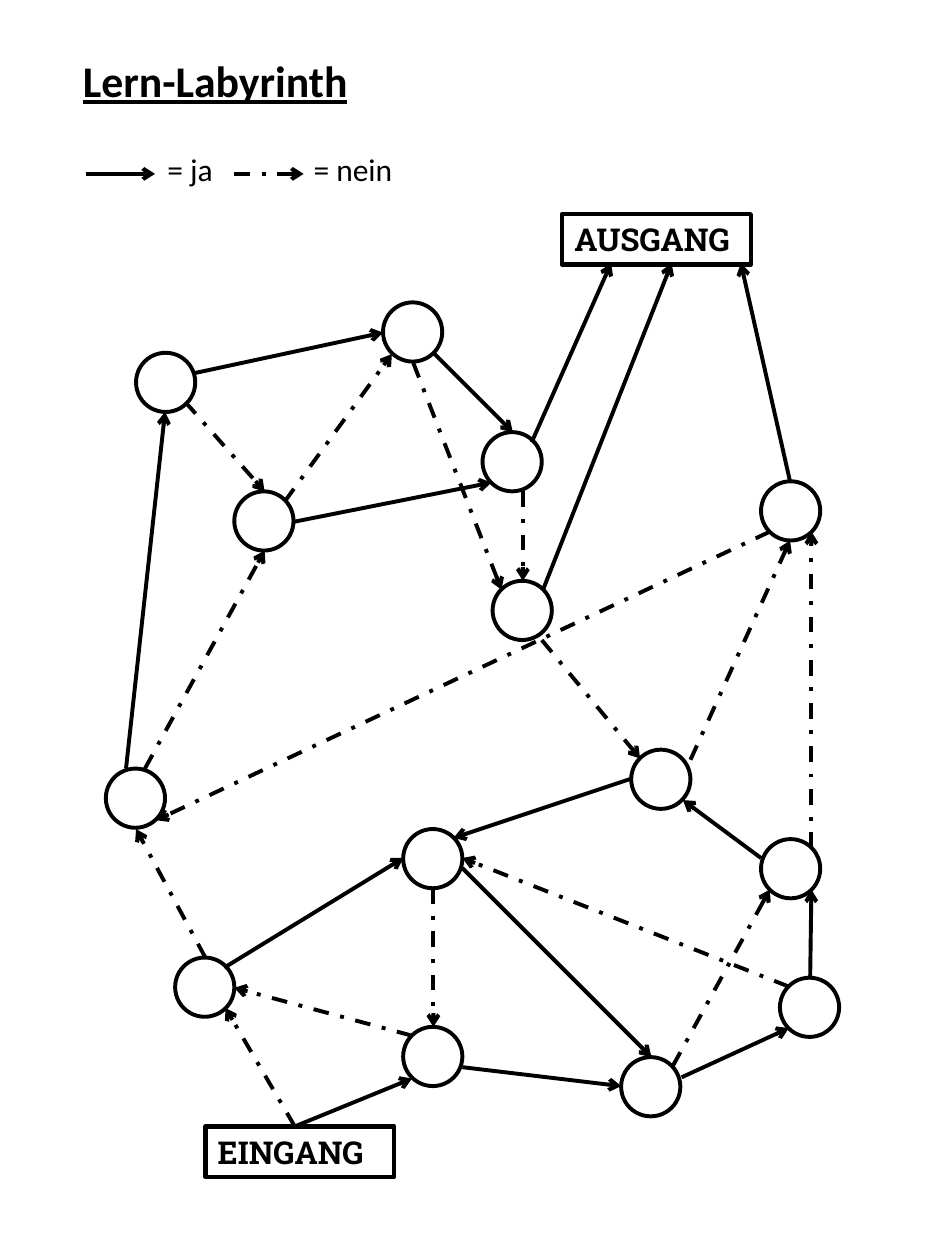
from dataclasses import dataclass
from typing import NamedTuple

from lxml.etree import SubElement
from pptx import Presentation
from pptx.dml.color import RGBColor as Rgb
from pptx.enum.dml import MSO_LINE_DASH_STYLE as Dash
from pptx.enum.shapes import MSO_CONNECTOR as Link, MSO_SHAPE as Kind
from pptx.enum.text import MSO_ANCHOR as Anchor, MSO_AUTO_SIZE as Fit, PP_ALIGN as Align
from pptx.oxml.ns import qn
from pptx.shapes.shapetree import SlideShapes as Shapes
from pptx.util import Emu, Pt

SCALE = 9144  # EMU in one px, 100 px to the inch


def px(n: int) -> Emu:
    return Emu(n * SCALE)


@dataclass(frozen=True)
class Theme:
    ink: Rgb = Rgb(0, 0, 0)
    body: str = "Calibri"
    slab: str = "Roboto Slab"
    title: float = 25
    text: float = 18
    line: float = 2.25
    frame: float = 2.5


THEME = Theme()
NODE = 47  # circle diameter


class Node(NamedTuple):
    x: int
    y: int


class Arrow(NamedTuple):
    x1: int
    y1: int
    x2: int
    y2: int


class Label(NamedTuple):
    text: str
    x: int
    y: int
    w: int
    h: int
    font: str = THEME.body
    size: float = THEME.text
    bold: bool = False
    under: bool = False


# Circles of the maze
NODES = [
    Node(383, 343), Node(604, 382), Node(108, 280), Node(186, 390),
    Node(391, 461), Node(84, 610), Node(304, 240), Node(320, 658),
    Node(501, 595), Node(604, 666), Node(619, 776), Node(493, 839),
    Node(320, 815), Node(139, 760),
]

# Solid arrows: ja
YES = [
    Arrow(68, 138, 123, 138),  # legend
    Arrow(541, 855, 626, 816), Arrow(422, 351, 485, 209),
    Arrow(431, 468, 533, 209), Arrow(627, 382, 588, 209),
    Arrow(234, 414, 390, 383), Arrow(344, 280, 407, 343),
    Arrow(155, 296, 304, 264), Arrow(100, 610, 131, 327),
    Arrow(234, 894, 327, 856), Arrow(367, 847, 493, 862),
    Arrow(367, 689, 517, 839), Arrow(178, 768, 320, 681),
    Arrow(501, 618, 360, 665), Arrow(643, 776, 644, 706),
    Arrow(604, 681, 542, 635),
]

# Dash-dot arrows: nein
NO = [
    Arrow(186, 138, 241, 138),  # legend
    Arrow(226, 398, 311, 281), Arrow(147, 319, 210, 390),
    Arrow(115, 610, 210, 437), Arrow(611, 422, 124, 651),
    Arrow(328, 288, 398, 468), Arrow(415, 390, 415, 461),
    Arrow(163, 760, 108, 658), Arrow(234, 894, 179, 800),
    Arrow(548, 603, 627, 429), Arrow(430, 508, 508, 602),
    Arrow(327, 822, 186, 784), Arrow(534, 846, 611, 706),
    Arrow(344, 705, 344, 815), Arrow(626, 783, 367, 681),
    Arrow(644, 673, 644, 422),
]

GATES = [
    Label("AUSGANG", 446, 170, 150, 40, THEME.slab, bold=True),
    Label("EINGANG", 163, 894, 150, 40, THEME.slab, bold=True),
]

NOTES = [
    Label("Lern-Labyrinth", 56, 38, 291, 52, size=THEME.title, bold=True, under=True),
    Label("= ja", 123, 114, 87, 40),
    Label("= nein", 239, 114, 87, 40),
]


def outline(shape, width: float) -> None:
    shape.shadow.inherit = False
    shape.fill.background()
    shape.line.color.rgb = THEME.ink
    shape.line.width = Pt(width)


def write(shape, label: Label) -> None:
    frame = shape.text_frame
    frame.text = label.text
    frame.word_wrap = True
    frame.auto_size = Fit.SHAPE_TO_FIT_TEXT
    frame.vertical_anchor = Anchor.TOP
    para = frame.paragraphs[0]
    para.alignment = Align.LEFT
    font = para.runs[0].font
    font.name, font.size = label.font, Pt(label.size)
    font.bold, font.underline = label.bold, label.under
    font.color.rgb = THEME.ink


def draw_node(shapes: Shapes, node: Node) -> None:
    ring = shapes.add_shape(Kind.OVAL, px(node.x), px(node.y), px(NODE), px(NODE))
    outline(ring, THEME.line)


def draw_arrow(shapes: Shapes, arrow: Arrow, dashed: bool) -> None:
    link = shapes.add_connector(Link.STRAIGHT, *map(px, arrow))
    link.line.color.rgb = THEME.ink
    link.line.width = Pt(THEME.line)
    if dashed:
        link.line.dash_style = Dash.DASH_DOT
    SubElement(link.line._get_or_add_ln(), qn("a:tailEnd")).set("type", "arrow")
    SubElement(link._element.spPr, qn("a:effectLst"))


def draw_gate(shapes: Shapes, label: Label) -> None:
    gate = shapes.add_shape(Kind.RECTANGLE, *map(px, label[1:5]))
    outline(gate, THEME.frame)
    write(gate, label)


def draw_note(shapes: Shapes, label: Label) -> None:
    write(shapes.add_textbox(*map(px, label[1:5])), label)


def main() -> None:
    deck = Presentation()
    deck.slide_width, deck.slide_height = px(750), px(1000)
    shapes = deck.slides.add_slide(deck.slide_layouts[6]).shapes

    # Maze
    for node in NODES:
        draw_node(shapes, node)
    for arrow in YES:
        draw_arrow(shapes, arrow, dashed=False)
    for arrow in NO:
        draw_arrow(shapes, arrow, dashed=True)

    # Entry, exit, title and legend
    for gate in GATES:
        draw_gate(shapes, gate)
    for note in NOTES:
        draw_note(shapes, note)

    deck.save("out.pptx")


if __name__ == "__main__":
    main()
